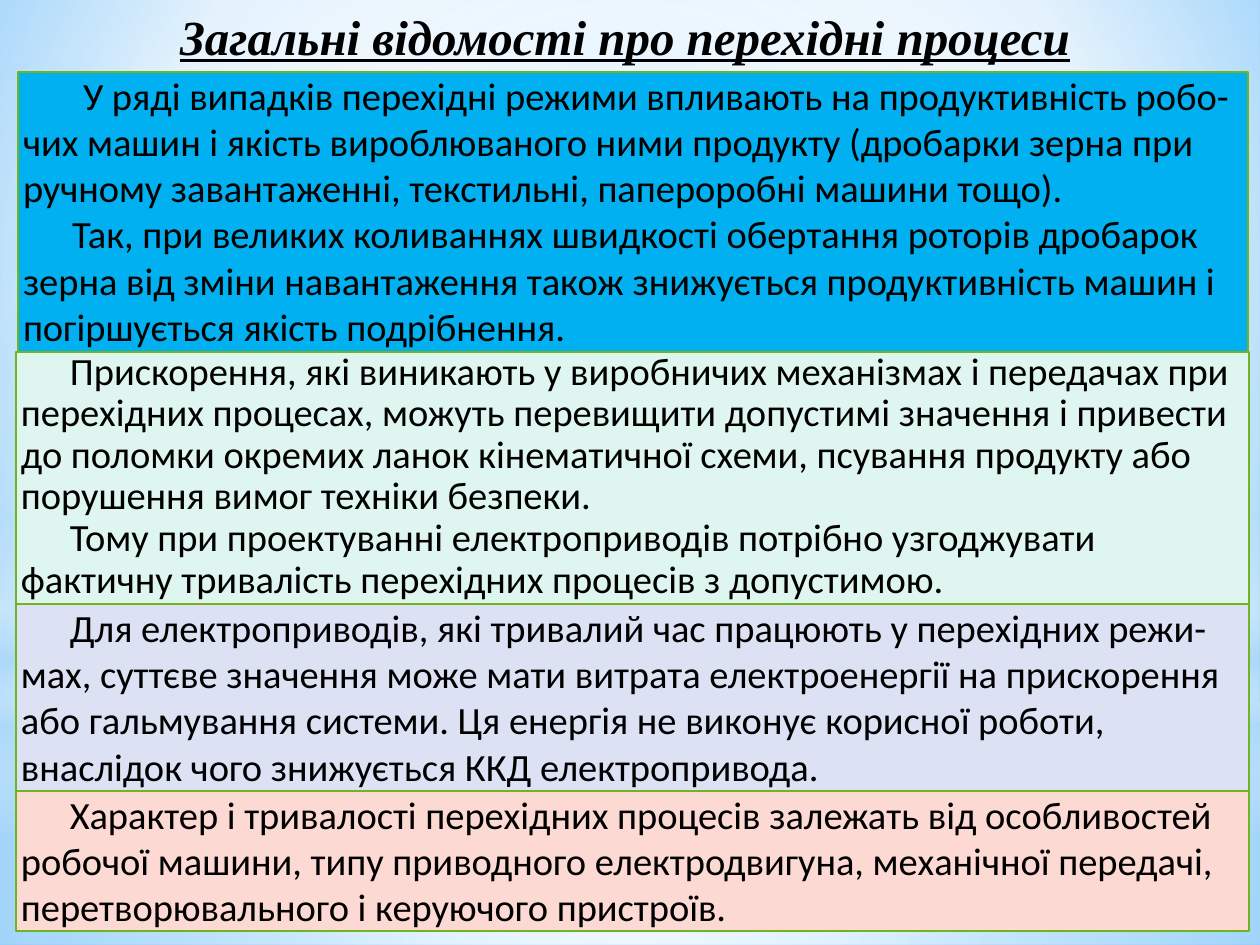
from lxml.etree import SubElement
from pptx import Presentation
from pptx.dml.color import RGBColor
from pptx.enum.shapes import MSO_SHAPE as Preset
from pptx.enum.text import MSO_ANCHOR as Anchor, MSO_AUTO_SIZE as AutoSize, PP_ALIGN as Align
from pptx.oxml.ns import qn
from pptx.util import Pt

PX = 914400 / 126
BLACK = RGBColor(0x00, 0x00, 0x00)
WHITE = RGBColor(0xFF, 0xFF, 0xFF)
GREEN = RGBColor(0x72, 0xB4, 0x1D)
AZURE = RGBColor(0x00, 0xB0, 0xF0)
MINT = RGBColor(0xDF, 0xF5, 0xEF)
LAVENDER = RGBColor(0xDC, 0xE1, 0xF4)
ROSE = RGBColor(0xFC, 0xD9, 0xD3)
PALE_BLUE = RGBColor(0xB4, 0xDC, 0xFA)
LIGHT_BLUE = RGBColor(0x9E, 0xD5, 0xFF)
SKY = RGBColor(0x5B, 0xB9, 0xFF)

TITLE = "Загальні відомості про перехідні процеси"
TITLE_PLACE = (10, 0, 1230, 72)

CENTRE = (50, 50, 50, 50)
BACKDROP = ([(0, LIGHT_BLUE, 100), (60, WHITE, 100), (100, SKY, 100)], (20, 10, 20, 60))
GLOWS = [
    (Preset.RECTANGLE, (0, 703, 1260, 242),
     [(0, WHITE, 91), (37, WHITE, 76), (100, PALE_BLUE, 79)], CENTRE),
    (Preset.RECTANGLE, (0, 0, 1260, 703),
     [(0, WHITE, 89), (48, WHITE, 62), (100, PALE_BLUE, 79)], CENTRE),
    (Preset.RECTANGLE, (0, 519, 1260, 315),
     [(0, WHITE, 0), (29, WHITE, 30), (45, PALE_BLUE, 40), (55, WHITE, 26),
      (65, PALE_BLUE, 60), (100, WHITE, 0)], None),
    (Preset.OVAL, (0, 221, 1260, 703), [(0, WHITE, 100), (56, WHITE, 0)], CENTRE),
]

INDENT = 49
PANELS = [
    ((18, 72, 1230, 280), AZURE, 1.0, [
        (60, "У ряді випадків перехідні режими впливають на продуктивність робо-чих машин "
             "і якість вироблюваного ними продукту (дробарки зерна при ручному завантаженні, "
             "текстильні, папероробні машини тощо)."),
        (INDENT, "Так, при великих коливаннях швидкості обертання роторів дробарок зерна від "
                 "зміни навантаження також знижується продуктивність машин і погіршується "
                 "якість подрібнення."),
    ]),
    ((16, 352, 1233, 252), MINT, 0.9, [
        (INDENT, "Прискорення, які виникають у виробничих механізмах і передачах при "
                 "перехідних процесах, можуть перевищити допустимі значення і привести до "
                 "поломки окремих ланок кінематичної схеми, псування продукту або порушення "
                 "вимог техніки безпеки."),
        (INDENT, "Тому при проектуванні електроприводів потрібно узгоджувати фактичну "
                 "тривалість перехідних процесів з допустимою."),
    ]),
    ((16, 604, 1233, 187), LAVENDER, 1.0, [
        (INDENT, "Для електроприводів, які тривалий час працюють у перехідних режи-мах, "
                 "суттєве значення може мати витрата електроенергії на прискорення або "
                 "гальмування системи. Ця енергія не виконує корисної роботи, внаслідок чого "
                 "знижується ККД електропривода."),
    ]),
    ((16, 791, 1233, 140), ROSE, 1.0, [
        (INDENT, "Характер і тривалості перехідних процесів залежать від особливостей робочої "
                 "машини, типу приводного електродвигуна, механічної передачі, "
                 "перетворювального і керуючого пристроїв."),
    ]),
]


def px(length):
    return round(length * PX)


def apply_gradient(properties, stops, focus):
    """Replace a solid fill by a gradient, radial with a focus, else vertical."""
    solid = properties.find(qn("a:solidFill"))
    gradient = properties.makeelement(qn("a:gradFill"), {"rotWithShape": "1"})
    properties.replace(solid, gradient)
    stop_list = SubElement(gradient, qn("a:gsLst"))
    for position, colour, opacity in stops:
        stop = SubElement(stop_list, qn("a:gs"), pos=str(position * 1000))
        shade = SubElement(stop, qn("a:srgbClr"), val=str(colour))
        SubElement(shade, qn("a:alpha"), val=str(opacity * 1000))
    if focus:
        radial = SubElement(gradient, qn("a:path"), {"path": "circle"})
        edges = {side: str(share * 1000) for side, share in zip("ltrb", focus)}
        SubElement(radial, qn("a:fillToRect"), edges)
    else:
        SubElement(gradient, qn("a:lin"), ang="5400000", scaled="0")


def add_block(slide, preset, place, colour):
    block = slide.shapes.add_shape(preset, *map(px, place))
    block.shadow.inherit = False
    block.fill.solid()
    block.fill.fore_color.rgb = colour
    return block


def set_frame(frame, side, edge):
    frame.word_wrap = True
    frame.auto_size = AutoSize.SHAPE_TO_FIT_TEXT
    frame.vertical_anchor = Anchor.TOP
    frame.margin_left = frame.margin_right = px(side)
    frame.margin_top = frame.margin_bottom = px(edge)


def add_text(paragraph, wording, font_name, size):
    run = paragraph.add_run()
    run.text = wording
    run.font.name = font_name
    run.font.size = Pt(size)
    run.font.color.rgb = BLACK
    return run


def add_panel(slide, place, colour, spacing, passages):
    panel = add_block(slide, Preset.RECTANGLE, place, colour)
    panel.line.color.rgb = GREEN
    panel.line.width = Pt(1.25)
    frame = panel.text_frame
    set_frame(frame, 5, 0)
    for index, (indent, wording) in enumerate(passages):
        paragraph = frame.add_paragraph() if index else frame.paragraphs[0]
        paragraph.alignment = Align.LEFT
        paragraph.line_spacing = spacing
        paragraph._p.get_or_add_pPr().set("indent", str(px(indent)))
        add_text(paragraph, wording, "Calibri", 22)


def main():
    deck = Presentation()
    deck.slide_width, deck.slide_height = px(1260), px(945)
    slide = deck.slides.add_slide(deck.slide_layouts[5])

    slide.background.fill.solid()
    apply_gradient(slide._element.xpath("p:cSld/p:bg/p:bgPr")[0], *BACKDROP)
    for preset, place, stops, focus in GLOWS:
        glow = add_block(slide, preset, place, WHITE)
        glow.line.fill.background()
        apply_gradient(glow._element.spPr, stops, focus)

    for panel in PANELS:
        add_panel(slide, *panel)

    title = slide.shapes.title
    title.left, title.top, title.width, title.height = map(px, TITLE_PLACE)
    set_frame(title.text_frame, 0, 6)
    heading = title.text_frame.paragraphs[0]
    heading.alignment = Align.CENTER
    heading_font = add_text(heading, TITLE, "Times New Roman", 28).font
    heading_font.bold = heading_font.italic = heading_font.underline = True
    slide.shapes._spTree.append(title._element)

    deck.save("out.pptx")


if __name__ == "__main__":
    main()
